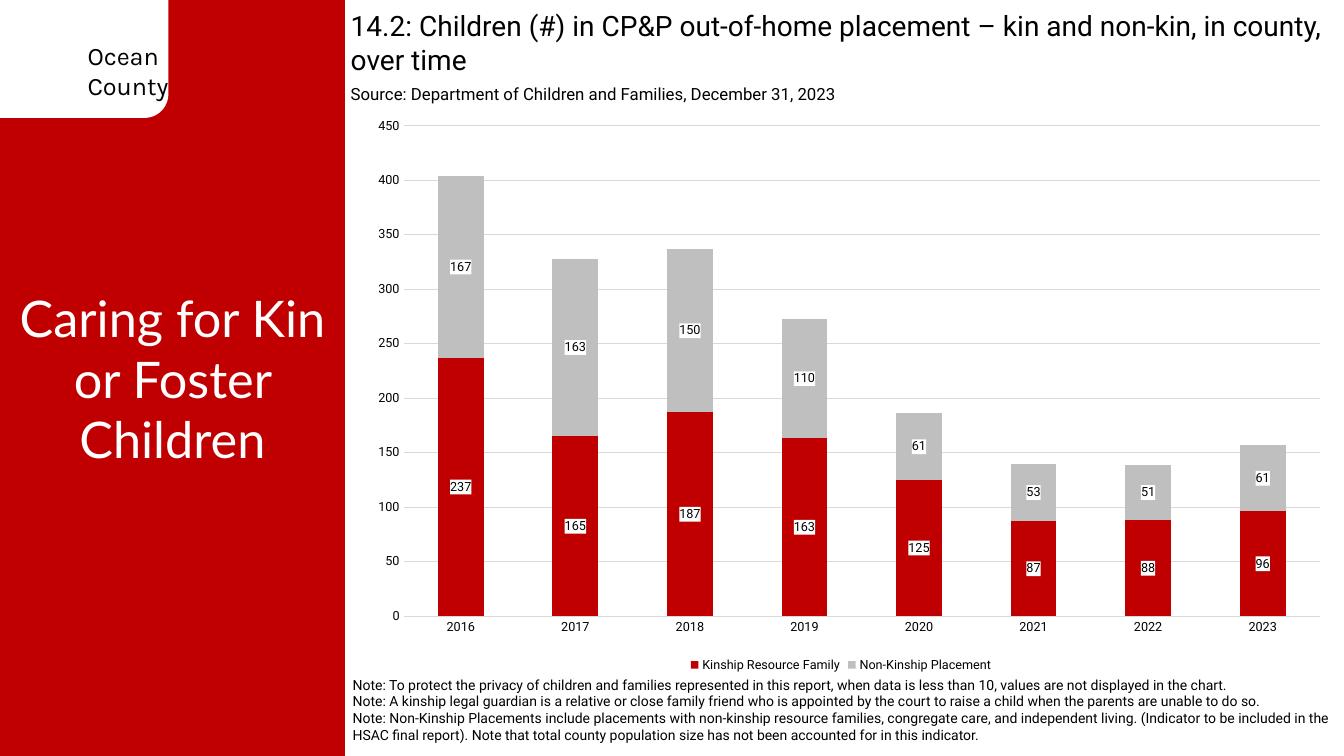
"""Builds the Ocean County slide on kin and non-kin placements over time."""
from lxml import etree
from pptx import Presentation
from pptx.chart.data import CategoryChartData
from pptx.dml.color import RGBColor
from pptx.enum.chart import XL_CHART_TYPE, XL_LEGEND_POSITION, XL_TICK_MARK
from pptx.enum.shapes import MSO_SHAPE
from pptx.enum.text import MSO_ANCHOR, PP_ALIGN
from pptx.oxml import parse_xml
from pptx.util import Inches, Pt

STACKED = XL_CHART_TYPE.COLUMN_STACKED
BOTTOM = XL_LEGEND_POSITION.BOTTOM
NO_TICK = XL_TICK_MARK.NONE
RECT, ROUND = MSO_SHAPE.RECTANGLE, MSO_SHAPE.ROUNDED_RECTANGLE
TOP, MIDDLE = MSO_ANCHOR.TOP, MSO_ANCHOR.MIDDLE
LEFT, CENTER = PP_ALIGN.LEFT, PP_ALIGN.CENTER

THEME = {
    "red": RGBColor(0xC0, 0, 0), "gray": RGBColor(0xBF, 0xBF, 0xBF),
    "rule": RGBColor(0xD9, 0xD9, 0xD9), "white": RGBColor(255, 255, 255),
    "black": RGBColor(0, 0, 0),
    "body": "Roboto", "tag": "Karla", "head": "Lato",
    "topic": 36, "title": 20, "county": 18, "source": 12, "note": 10, "chart": 9,
}
WIDE, HIGH, SIDE = 13.33, 7.5, 3.42


def style(font, size, face="body", color="black"):
    font.size = Pt(THEME[size])
    font.name = THEME[face]
    font.color.rgb = THEME[color]


def write(box, lines, size, face="body", color="black", align=LEFT, anchor=TOP):
    frame = slide.shapes.add_textbox(*map(Inches, box)).text_frame
    frame.word_wrap = True
    frame.vertical_anchor = anchor
    for i, line in enumerate(lines):
        para = frame.paragraphs[0] if i == 0 else frame.add_paragraph()
        para.text = line
        para.alignment = align
        for run in para.runs:
            style(run.font, size, face, color)
    return frame


deck = Presentation()
deck.slide_width, deck.slide_height = Inches(WIDE), Inches(HIGH)
slide = deck.slides.add_slide(deck.slide_layouts[6])

panels = [
    (RECT, (0, 0, SIDE, HIGH), "red"),
    (ROUND, (-0.33, -0.25, 2, 1.42), "white"),
]
for kind, box, color in panels:
    panel = slide.shapes.add_shape(kind, *map(Inches, box))
    panel.shadow.inherit = False
    panel.fill.solid()
    panel.fill.fore_color.rgb = THEME[color]
    panel.line.fill.background()

county = write((0.77, 0.35, 1, 0.71), ["Ocean", "County"], "county", "tag")
county.margin_right = 0
write((3.38, 0.04, 9.92, 1.04),
      ["14.2: Children (#) in CP&P out-of-home placement – kin and non-kin, in county, over time"],
      "title")
write((3.38, 0.78, 7.05, 0.3),
      ["Source: Department of Children and Families, December 31, 2023"], "source")
write((3.4, 6.58, 9.94, 0.92), [
    "Note: To protect the privacy of children and families represented in this report, "
    "when data is less than 10, values are not displayed in the chart.",
    "Note: A kinship legal guardian is a relative or close family friend who is appointed "
    "by the court to raise a child when the parents are unable to do so.\n"
    "Note: Non-Kinship Placements include placements with non-kinship resource families, "
    "congregate care, and independent living. (Indicator to be included in the HSAC final "
    "report). Note that total county population size has not been accounted for in this "
    "indicator.",
], "note", anchor=MIDDLE)

data = CategoryChartData()
data.categories = [str(year) for year in range(2016, 2024)]
data.add_series("Kinship Resource Family", (237, 165, 187, 163, 125, 87, 88, 96))
data.add_series("Non-Kinship Placement", (167, 163, 150, 110, 61, 53, 51, 61))
area = map(Inches, (3.51, 1.08, 9.66, 5.63))
chart = slide.shapes.add_chart(STACKED, *area, data).chart
style(chart.font, "chart")
chart.has_title = False
chart.has_legend = True
chart.legend.position = BOTTOM
chart.legend.include_in_layout = False
style(chart.legend.font, "chart")

years, count = chart.category_axis, chart.value_axis
for axis in (years, count):
    axis.major_tick_mark = axis.minor_tick_mark = NO_TICK
    style(axis.tick_labels.font, "chart")
count.minimum_scale, count.maximum_scale, count.major_unit = 0, 450, 50
count.has_major_gridlines = True
count.format.line.fill.background()
for line in (years.format.line, count.major_gridlines.format.line):
    line.color.rgb = THEME["rule"]
    line.width = Pt(0.75)

plot = chart.plots[0]
plot.gap_width, plot.overlap = 150, 100
plot.vary_by_categories = False
SPACE = ('xmlns:c="http://schemas.openxmlformats.org/drawingml/2006/chart" '
         'xmlns:a="http://schemas.openxmlformats.org/drawingml/2006/main"')
for series, color in zip(plot.series, ("red", "gray")):
    series.format.fill.solid()
    series.format.fill.fore_color.rgb = THEME[color]
    labels = series.data_labels
    labels.show_value = True
    style(labels.font, "chart")
    back = parse_xml(f'<c:spPr {SPACE}><a:solidFill><a:srgbClr val="{THEME["white"]}"/>'
                     '</a:solidFill></c:spPr>')
    labels._element.find("{*}txPr").addprevious(back)

zone = chart._chartSpace.find(".//{*}plotArea")
for old in zone.findall("{*}layout"):
    zone.remove(old)
layout = parse_xml(f'<c:layout {SPACE}><c:manualLayout/></c:layout>')
rules = [("layoutTarget", "inner"), ("xMode", "edge"), ("yMode", "edge"),
         ("x", "0.051"), ("y", "0.03"), ("w", "0.941"), ("h", "0.864")]
for name, value in rules:
    etree.SubElement(layout[0], f"{{{layout.nsmap['c']}}}{name}").set("val", value)
zone.insert(0, layout)

write((0, 2.8, SIDE, 1.92), ["Caring for Kin or Foster Children"],
      "topic", "head", "white", CENTER)

deck.save("out.pptx")
